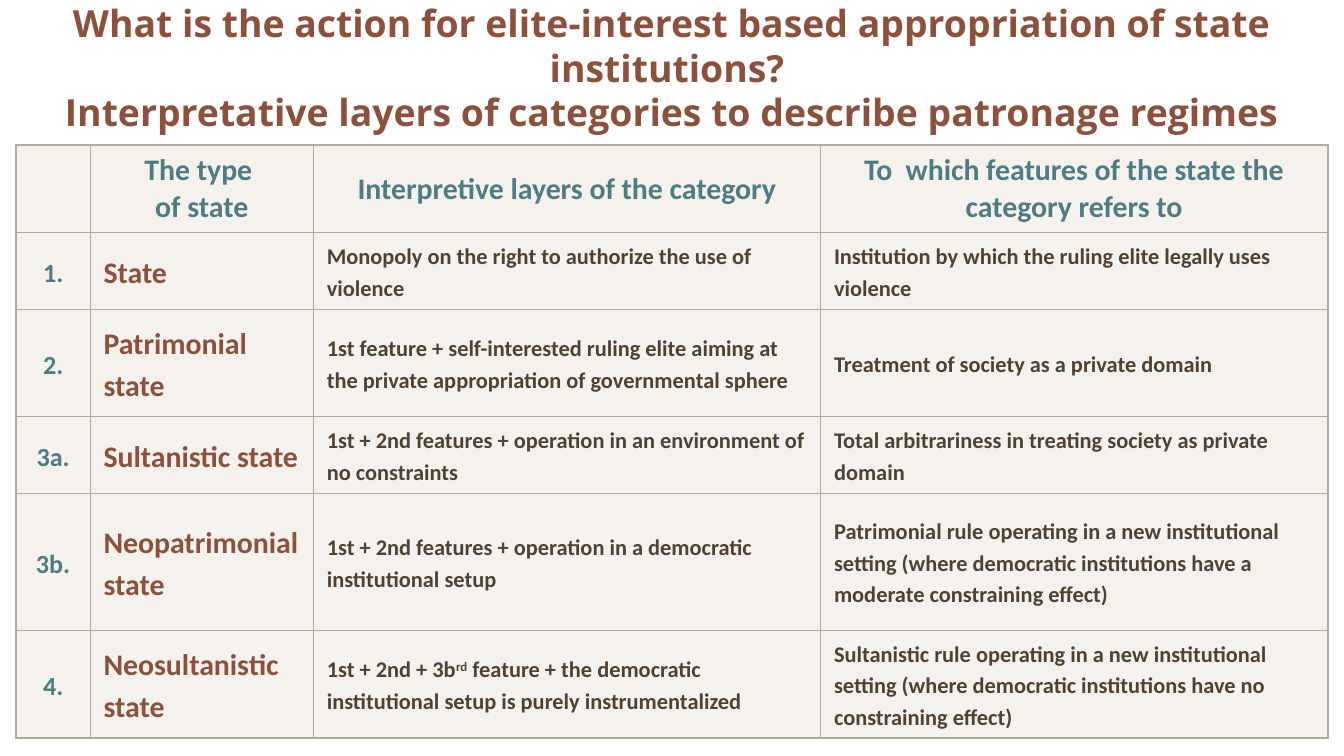
from lxml import etree
from pptx import Presentation
from pptx.dml.color import RGBColor
from pptx.enum.text import MSO_ANCHOR as Anchor, MSO_AUTO_SIZE as AutoSize, PP_ALIGN as Align
from pptx.oxml.ns import qn
from pptx.util import Inches, Pt

RUST = RGBColor(0x8D, 0x50, 0x3B)
TEAL = RGBColor(0x4D, 0x7C, 0x85)
BROWN = RGBColor(0x50, 0x41, 0x31)
SAND = RGBColor(0xEF, 0xEA, 0xE4)
TAUPE = RGBColor(0xB3, 0xA9, 0x9D)

TITLE = ("What is the action for elite-interest based appropriation of state institutions? \v"
         "Interpretative layers of categories to describe patronage regimes")
HEADER = ["", "The type \nof state", "Interpretive layers of the category",
          "To  which features of the state the category refers to"]
STATES = [
    ["1.", "State", "Monopoly on the right to authorize the use of violence",
     "Institution by which the ruling elite legally uses violence"],
    ["2.", "Patrimonial state",
     "1st feature + self-interested ruling elite aiming at the private appropriation "
     "of governmental sphere",
     "Treatment of society as a private domain"],
    ["3a.", "Sultanistic state",
     "1st + 2nd features + operation in an environment of no constraints",
     "Total arbitrariness in treating society as private domain"],
    ["3b.", "Neopatrimonial state",
     "1st + 2nd features + operation in a democratic institutional setup",
     "Patrimonial rule operating in a new institutional setting "
     "(where democratic institutions have a moderate constraining effect)"],
    ["4.", "Neosultanistic state",
     "1st + 2nd + 3b^rd^ feature + the democratic institutional setup is purely instrumentalized",
     "Sultanistic rule operating in a new institutional setting "
     "(where democratic institutions have no constraining effect)"],
]
COLUMN_WIDTHS = [0.55, 1.66, 3.77, 3.77]
ROW_HEIGHTS = [0.65, 0.57, 0.8, 0.57, 1.02, 0.8]
HEADER_STYLE = (16, TEAL, Align.CENTER, 1.0)
BODY_STYLES = [(14, TEAL, Align.CENTER, 1.15), (16, RUST, Align.LEFT, 1.15),
               (12, BROWN, Align.LEFT, 1.15), (12, BROWN, Align.LEFT, 1.15)]
SUPERSCRIPT_MARK = "^"


def format_font(font, name, size, color):
    font.name = name
    font.size = Pt(size)
    font.bold = True
    font.color.rgb = color


def add_title(slide, left, top, width, height):
    title = slide.shapes.title
    title.left, title.top, title.width, title.height = map(Inches, (left, top, width, height))
    frame = title.text_frame
    frame.text = TITLE
    frame.word_wrap = True
    frame.auto_size = AutoSize.NONE
    frame.vertical_anchor = Anchor.MIDDLE
    paragraph = frame.paragraphs[0]
    paragraph.alignment = Align.CENTER
    for run in paragraph.runs:
        format_font(run.font, "Open Sans", 20, RUST)


def write_cell(cell, text, style):
    size, color, alignment, line_spacing = style
    cell.vertical_anchor = Anchor.MIDDLE
    frame = cell.text_frame
    for index, line in enumerate(text.split("\n")):
        paragraph = frame.add_paragraph() if index else frame.paragraphs[0]
        paragraph.alignment = alignment
        paragraph.line_spacing = line_spacing
        for part_index, part in enumerate(line.split(SUPERSCRIPT_MARK)):
            run = paragraph.add_run()
            run.text = part
            format_font(run.font, "Calibri", size, color)
            if part_index % 2:
                run.font._element.set("baseline", "30000")


def paint_cell(cell, border_widths):
    cell.fill.solid()
    cell.fill.fore_color.rgb = SAND
    properties = cell._tc.get_or_add_tcPr()
    fill_color = properties.find(qn("a:solidFill"))[0]
    etree.SubElement(fill_color, qn("a:alpha"), val="60000")
    for index, (side, width) in enumerate(border_widths.items()):
        line = etree.Element(qn(f"a:ln{side}"), w=str(Pt(width)))
        fill = etree.SubElement(line, qn("a:solidFill"))
        etree.SubElement(fill, qn("a:srgbClr"), val=str(TAUPE))
        properties.insert(index, line)


def add_state_table(slide, left, top, width, height):
    rows = [HEADER] + STATES
    last_row, last_column = len(rows) - 1, len(HEADER) - 1
    table = slide.shapes.add_table(len(rows), len(HEADER), Inches(left), Inches(top),
                                   Inches(width), Inches(height)).table
    for column, share in zip(table.columns, COLUMN_WIDTHS):
        column.width = Inches(width * share / sum(COLUMN_WIDTHS))
    for row, share in zip(table.rows, ROW_HEIGHTS):
        row.height = Inches(height * share / sum(ROW_HEIGHTS))
    for row_index, texts in enumerate(rows):
        for column_index, text in enumerate(texts):
            cell = table.cell(row_index, column_index)
            style = BODY_STYLES[column_index] if row_index else HEADER_STYLE
            if text:
                write_cell(cell, text, style)
            on_edge = {"L": column_index == 0, "R": column_index == last_column,
                       "T": row_index == 0, "B": row_index == last_row}
            paint_cell(cell, {side: 1 if outer else 0.5 for side, outer in on_edge.items()})


def main():
    presentation = Presentation()
    presentation.slide_width = Inches(10)
    presentation.slide_height = presentation.slide_width * 9 // 16
    slide = presentation.slides.add_slide(presentation.slide_layouts[5])
    add_title(slide, 0.12, 0, 9.76, 1)
    add_state_table(slide, 0.12, 1.08, 9.76, 4.41)
    presentation.save("out.pptx")


if __name__ == "__main__":
    main()
